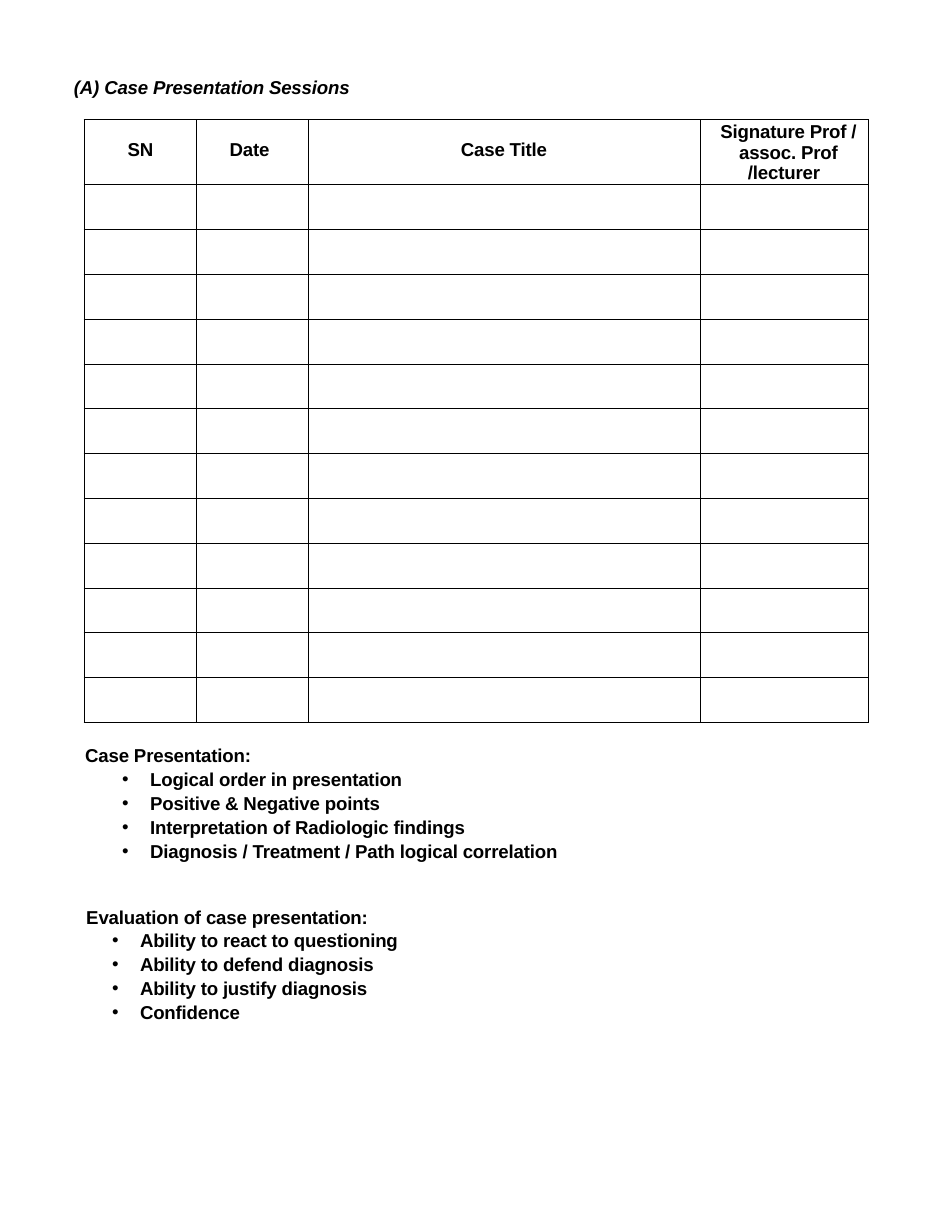
from lxml.etree import SubElement
from pptx import Presentation
from pptx.dml.color import RGBColor
from pptx.enum.text import MSO_ANCHOR, MSO_AUTO_SIZE, PP_ALIGN
from pptx.oxml.ns import qn
from pptx.util import Inches, Pt

BLACK = RGBColor(0, 0, 0)
WHITE = RGBColor(255, 255, 255)
FONT = {"name": "Arial", "size": Pt(12), "bold": True}

COLUMN_WIDTHS = [1, 1, 3.5, 1.5]
HEADER_HEIGHT = 0.58
ROW_HEIGHT = 0.4
SESSION_ROWS = 12
BORDER_WIDTH = Pt(0.5)

CRITERIA = [
    ("Case Presentation:", 1, 0.01, 0.59, [
        "Logical order in presentation",
        "Positive & Negative points",
        "Interpretation of Radiologic findings",
        "Diagnosis / Treatment / Path logical correlation",
    ]),
    ("Evaluation of case presentation:", 28, 0.02, 0.5, [
        "Ability to react to questioning",
        "Ability to defend diagnosis",
        "Ability to justify diagnosis",
        "Confidence",
    ]),
]


def set_values(target, values):
    for name, value in values.items():
        setattr(target, name, value)


def write(para, text, italic=False, **layout):
    set_values(para, {"alignment": PP_ALIGN.LEFT, "space_before": Pt(0), **layout})
    span = para.add_run()
    span.text = text
    set_values(span.font, {**FONT, "italic": italic})
    span.font.color.rgb = BLACK
    span.font._element.set("spc", "-10")


def set_indent(para, left, bullet=False):
    properties = para._p.get_or_add_pPr()
    properties.set("marL", str(Inches(left)))
    properties.set("indent", str(Inches(-0.25 if bullet else 0)))
    if bullet:
        SubElement(properties, qn("a:buFont"), typeface="Arial")
        SubElement(properties, qn("a:buChar"), char="•")
    else:
        SubElement(properties, qn("a:buNone"))


def place(shape, box):
    for name, value in zip(("left", "top", "width", "height"), box):
        setattr(shape, name, Inches(value))
    set_values(shape.text_frame, {
        "margin_left": 0, "margin_right": 0, "margin_bottom": 0,
        "margin_top": Inches(0.01), "word_wrap": True,
        "auto_size": MSO_AUTO_SIZE.NONE, "vertical_anchor": MSO_ANCHOR.TOP,
    })
    return shape.text_frame


def add_title(page, box):
    para = place(page.shapes.title, box).paragraphs[0]
    write(para, "(A) Case Presentation Sessions", italic=True, space_before=Pt(1))
    set_indent(para, 0.01)


def format_cell(cell):
    set_values(cell, {"margin_left": 0, "margin_right": 0,
                      "margin_top": 0, "margin_bottom": 0})
    properties = cell._tc.get_or_add_tcPr()
    for side in ("lnL", "lnR", "lnT", "lnB"):
        line = SubElement(properties, qn(f"a:{side}"), w=str(BORDER_WIDTH))
        fill = SubElement(line, qn("a:solidFill"))
        SubElement(fill, qn("a:srgbClr"), val=str(BLACK))
    cell.fill.solid()
    cell.fill.fore_color.rgb = WHITE


def add_sessions_table(page, box):
    left, top, width, height = map(Inches, box)
    table = page.shapes.add_table(
        SESSION_ROWS + 1, len(COLUMN_WIDTHS), left, top, width, height).table
    set_values(table, {"first_row": False, "horz_banding": False})
    for column, column_width in zip(table.columns, COLUMN_WIDTHS):
        column.width = Inches(column_width)
    for row in table.rows:
        row.height = Inches(ROW_HEIGHT)
    table.rows[0].height = Inches(HEADER_HEIGHT)
    for cell in table.iter_cells():
        format_cell(cell)

    labels = [("SN", PP_ALIGN.CENTER, 0.01), ("Date", PP_ALIGN.LEFT, 0.3),
              ("Case Title", PP_ALIGN.CENTER, 0)]
    for column, (label, alignment, indent) in enumerate(labels):
        cell = table.cell(0, column)
        cell.margin_top = Inches(0.18)
        para = cell.text_frame.paragraphs[0]
        write(para, label, alignment=alignment)
        set_indent(para, indent)

    signature = table.cell(0, 3)
    signature.margin_top = Inches(0.01)
    frame = signature.text_frame
    write(frame.paragraphs[0], "Signature Prof / assoc. Prof",
          alignment=PP_ALIGN.CENTER, line_spacing=Pt(13.8))
    set_indent(frame.paragraphs[0], 0.08)
    write(frame.add_paragraph(), "/lecturer",
          alignment=PP_ALIGN.CENTER, line_spacing=Pt(12.8))


def add_criteria(page, box):
    frame = place(page.placeholders[1], box)
    para = frame.paragraphs[0]
    for heading, gap, heading_indent, item_indent, items in CRITERIA:
        if para.runs:
            para = frame.add_paragraph()
        write(para, heading, space_before=Pt(gap))
        set_indent(para, heading_indent)
        for item in items:
            para = frame.add_paragraph()
            write(para, item, space_before=Pt(1))
            set_indent(para, item_indent, bullet=True)


def main():
    deck = Presentation()
    set_values(deck, {"slide_width": Inches(8.5), "slide_height": Inches(11)})
    page = deck.slides.add_slide(deck.slide_layouts[1])
    add_title(page, (0.65, 0.67, 2.6, 0.23))
    table_height = HEADER_HEIGHT + SESSION_ROWS * ROW_HEIGHT
    add_sessions_table(page, (0.75, 1.07, sum(COLUMN_WIDTHS), table_height))
    add_criteria(page, (0.75, 6.63, 4.33, 2.43))
    deck.save("out.pptx")


if __name__ == "__main__":
    main()
